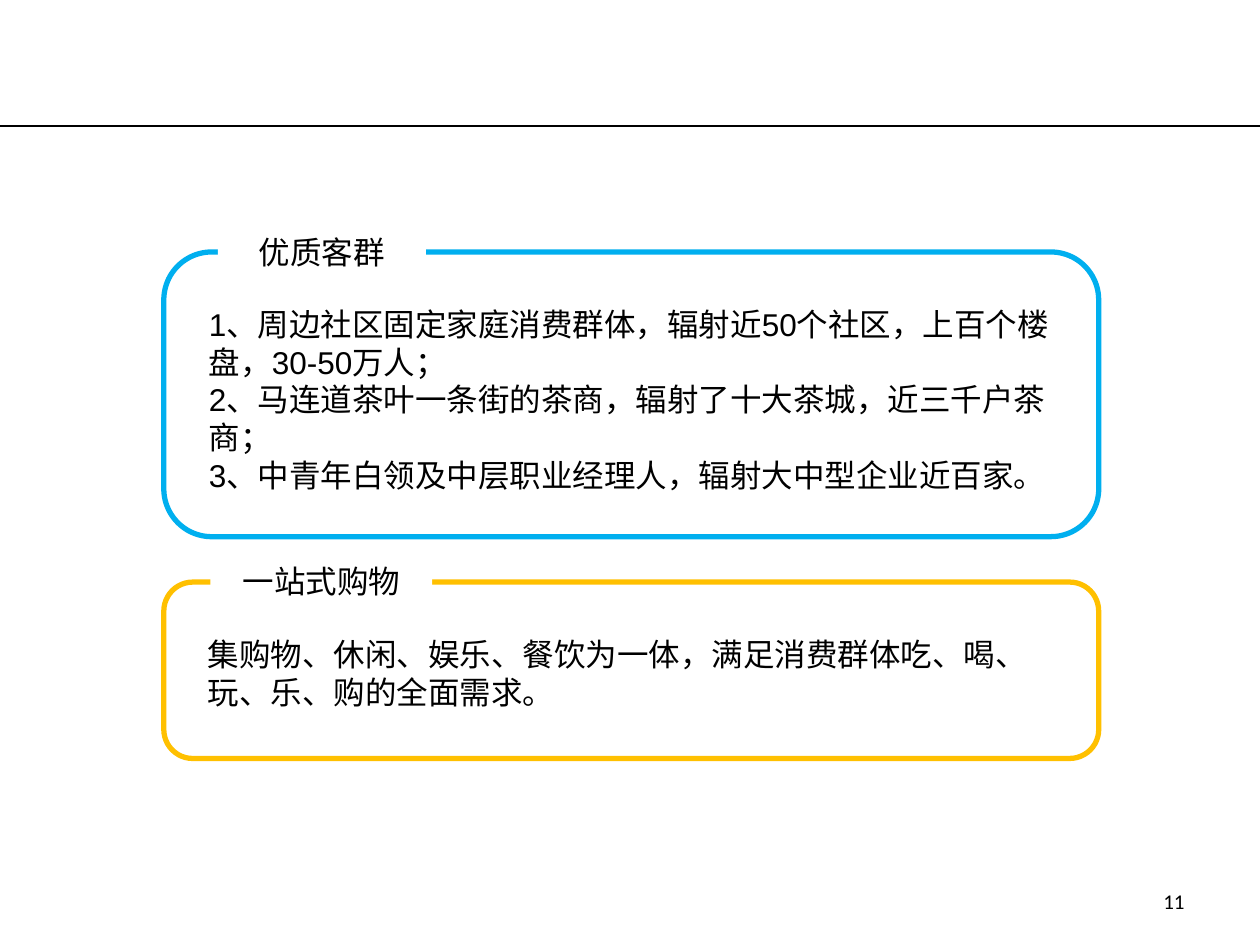
"""Build the slide on customer groups and one-stop shopping."""
from dataclasses import dataclass

import pptx
import pptx.dml.color
import pptx.enum.shapes
import pptx.enum.text
import pptx.oxml.ns
import pptx.util
from lxml import etree

Inches = pptx.util.Inches
Align = pptx.enum.text.PP_ALIGN
Anchor = pptx.enum.text.MSO_ANCHOR
Preset = pptx.enum.shapes.MSO_SHAPE


@dataclass(frozen=True)
class Theme:
    """Colours, fonts and sizes."""
    ink: str = "000000"
    paper: str = "FFFFFF"
    blue: str = "00AFEF"
    amber: str = "FFC000"
    latin: str = "Arial"
    base: str = "Calibri"
    body_pt: float = 18
    number_pt: float = 12
    frame_pt: float = 3
    rule_pt: float = 0.75


@dataclass(frozen=True)
class Box:
    """A rectangle in inches."""
    left: float
    top: float
    width: float
    height: float

    def lengths(self) -> list:
        """Return the four lengths for a shape call."""
        return [Inches(v) for v in (self.left, self.top, self.width, self.height)]


@dataclass(frozen=True)
class Panel:
    """A framed topic with its heading and body."""
    frame: Box
    radius: float
    color: str
    heading: str
    heading_box: Box
    body: tuple
    body_box: Box
    body_font: str


THEME = Theme()
PANELS = (
    Panel(
        Box(1.3, 2, 7.42, 2.26), 0.38, THEME.blue,
        "优质客群", Box(1.73, 1.8, 1.65, 0.4),
        (
            "1、周边社区固定家庭消费群体，辐射近50个社区，上百个楼 盘，30-50万人；",
            "2、马连道茶叶一条街的茶商，辐射了十大茶城，近三千户茶商；",
            "3、中青年白领及中层职业经理人，辐射大中型企业近百家。",
        ),
        Box(1.56, 2.37, 6.9, 1.62), THEME.latin,
    ),
    Panel(
        Box(1.3, 4.62, 7.42, 1.4), 0.23, THEME.amber,
        "一站式购物", Box(1.67, 4.41, 1.76, 0.4),
        ("集购物、休闲、娱乐、餐饮为一体，满足消费群体吃、喝、玩、乐、购的全面需求。",),
        Box(1.55, 4.99, 6.91, 0.71), THEME.base,
    ),
)


def rgb(color: str) -> pptx.dml.color.RGBColor:
    """Turn a hex colour into an RGB value."""
    return pptx.dml.color.RGBColor.from_string(color)


def write(shape, lines: tuple, font: str, size: float, align=Align.LEFT, anchor=Anchor.TOP) -> None:
    """Fill a shape with formatted paragraphs."""
    frame = shape.text_frame
    for name, value in {"word_wrap": True, "vertical_anchor": anchor}.items():
        setattr(frame, name, value)
    frame.text = "\n".join(lines)
    formats = {"name": font, "size": pptx.util.Pt(size)}
    for paragraph in frame.paragraphs:
        paragraph.alignment = align
        for run in paragraph.runs:
            run.font.color.rgb = rgb(THEME.ink)
            for name, value in formats.items():
                setattr(run.font, name, value)


def draw_rule(slide, top: float, width: float) -> None:
    """Draw the full-width line under the header."""
    rule = slide.shapes.add_connector(
        pptx.enum.shapes.MSO_CONNECTOR.STRAIGHT, 0, Inches(top), Inches(width), Inches(top))
    rule.line.color.rgb = rgb(THEME.ink)
    rule.line.width = pptx.util.Pt(THEME.rule_pt)
    etree.SubElement(rule._element.spPr, pptx.oxml.ns.qn("a:effectLst"))


def draw_panel(slide, panel: Panel) -> None:
    """Draw the frame, the heading that breaks it, and the body."""
    frame = slide.shapes.add_shape(Preset.ROUNDED_RECTANGLE, *panel.frame.lengths())
    frame.shadow.inherit = False
    frame.adjustments[0] = panel.radius / panel.frame.height
    frame.fill.background()
    frame.line.color.rgb = rgb(panel.color)
    frame.line.width = pptx.util.Pt(THEME.frame_pt)

    heading = slide.shapes.add_shape(Preset.RECTANGLE, *panel.heading_box.lengths())
    heading.shadow.inherit = False
    heading.fill.solid()
    heading.fill.fore_color.rgb = rgb(THEME.paper)
    heading.line.fill.background()
    write(heading, (panel.heading,), THEME.base, THEME.body_pt, Align.CENTER)

    body = slide.shapes.add_textbox(*panel.body_box.lengths())
    write(body, panel.body, panel.body_font, THEME.body_pt)


def main() -> None:
    """Build and save the slide."""
    deck = pptx.Presentation()
    deck.slide_width, deck.slide_height = Inches(10), Inches(7.5)
    slide = deck.slides.add_slide(deck.slide_layouts.get_by_name("Blank"))
    draw_rule(slide, 1, 10)
    page_number = slide.shapes.add_textbox(*Box(7.17, 6.95, 2.33, 0.4).lengths())
    write(page_number, ("11",), THEME.base, THEME.number_pt, Align.RIGHT, Anchor.MIDDLE)
    for panel in PANELS:
        draw_panel(slide, panel)
    deck.save("out.pptx")


if __name__ == "__main__":
    main()
